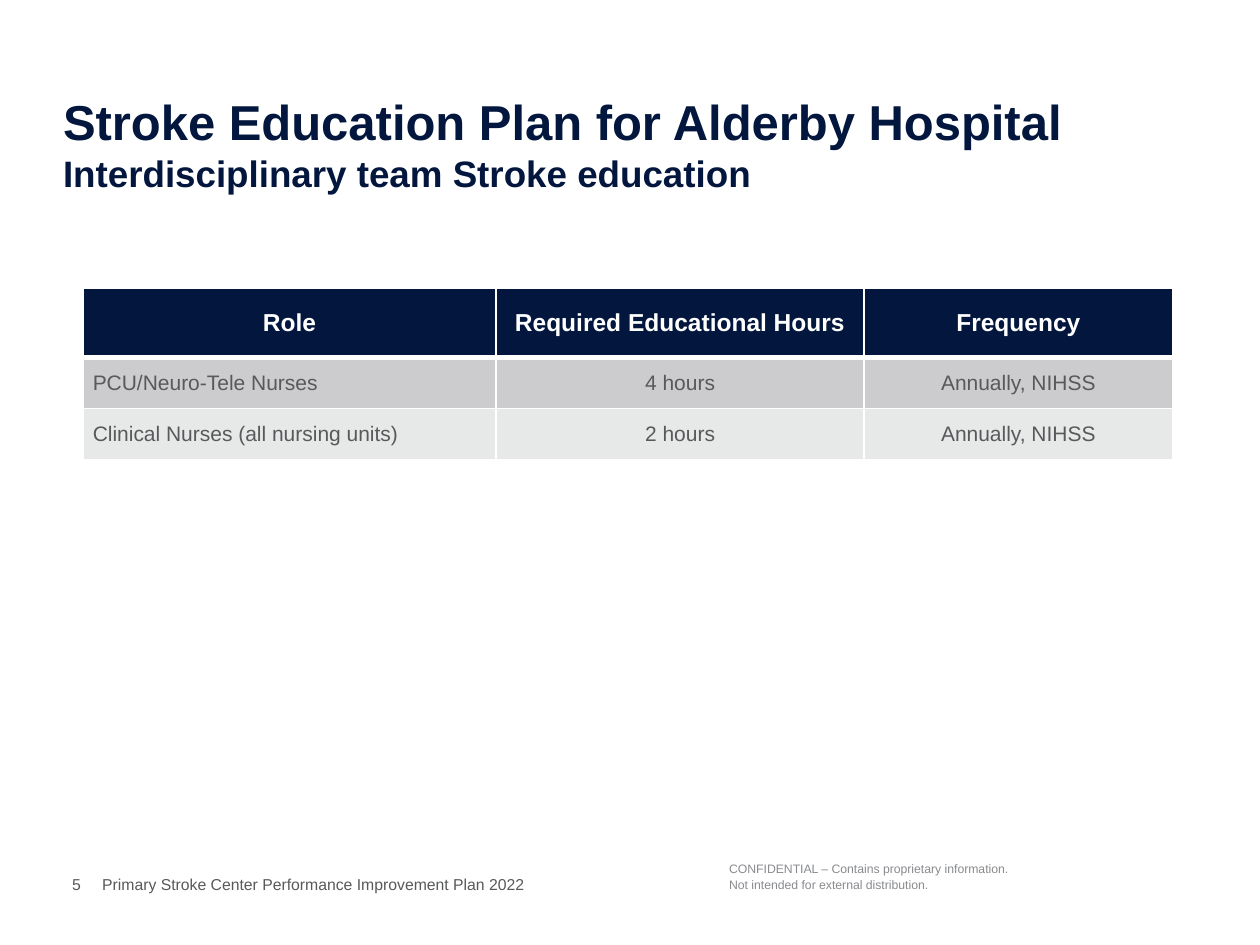
"""Build the stroke education plan slide."""
import dataclasses

import pptx
import pptx.dml.color
import pptx.enum.text
import pptx.oxml
import pptx.oxml.ns
import pptx.util

Cm = pptx.util.Cm
ALIGN = pptx.enum.text.PP_ALIGN
ANCHOR = pptx.enum.text.MSO_ANCHOR


@dataclasses.dataclass(frozen=True)
class Theme:
    """Hold the colours and type sizes of the slide."""
    font: str = "Arial"
    navy: str = "03173E"
    white: str = "FFFFFF"
    text: str = "58595B"
    muted: str = "898B8E"
    bands: tuple = ("CCCCCE", "E7E8E8")
    title: float = 28
    subtitle: float = 21
    header: float = 14
    body: float = 12
    footer: float = 9
    notice: float = 7


THEME = Theme()
COLUMN_WIDTHS = (8.33, 7.42, 6.22)
ROW_HEIGHTS = (1.39, 1.03, 1.03)
EDUCATION = (
    ("Role", "Required Educational Hours", "Frequency"),
    ("PCU/Neuro-Tele Nurses", "4 hours", "Annually, NIHSS"),
    ("Clinical Nurses (all nursing units)", "2 hours", "Annually, NIHSS"),
)


def apply_format(target, values):
    """Set each named attribute on the target."""
    for name, value in values.items():
        setattr(target, name, value)


def add_run(paragraph, words, size, color, bold=False):
    """Add a formatted run to a paragraph."""
    run = paragraph.add_run()
    run.text = words
    apply_format(run.font, {"name": THEME.font, "size": pptx.util.Pt(size), "bold": bold})
    run.font.color.rgb = pptx.dml.color.RGBColor.from_string(color)


def set_frame(frame, anchor, inset=0):
    """Set wrapping, anchor and vertical insets of a text frame."""
    apply_format(frame, {
        "word_wrap": True, "auto_size": pptx.enum.text.MSO_AUTO_SIZE.NONE,
        "vertical_anchor": anchor, "margin_left": 0, "margin_right": 0,
        "margin_top": Cm(inset), "margin_bottom": Cm(inset)})


def add_title(slide, heading, subheading):
    """Fill the title placeholder with a heading and a subheading."""
    title = slide.shapes.title
    apply_format(title, {"left": Cm(1.27), "top": Cm(0.93), "width": Cm(22.86), "height": Cm(3)})
    set_frame(title.text_frame, ANCHOR.BOTTOM)
    paragraph = title.text_frame.paragraphs[0]
    paragraph.alignment = ALIGN.LEFT
    add_run(paragraph, heading, THEME.title, THEME.navy, True)
    paragraph.add_line_break()
    add_run(paragraph, subheading, THEME.subtitle, THEME.navy, True)


def add_note(slide, box, lines, size, color, anchor=ANCHOR.MIDDLE, inset=0.13,
             align=ALIGN.LEFT, spacing=1.0):
    """Add a small text box with one paragraph per line."""
    frame = slide.shapes.add_textbox(*map(Cm, box)).text_frame
    set_frame(frame, anchor, inset)
    for index, line in enumerate(lines):
        paragraph = frame.add_paragraph() if index else frame.paragraphs[0]
        apply_format(paragraph, {"alignment": align, "line_spacing": spacing})
        add_run(paragraph, line, size, color)


def add_borders(cell, top, bottom):
    """Draw white cell borders with the given top and bottom widths in points."""
    properties = cell._tc.get_or_add_tcPr()
    widths = {"lnL": 1, "lnR": 1, "lnT": top, "lnB": bottom}
    for position, (side, width) in enumerate(widths.items()):
        properties.insert(position, pptx.oxml.parse_xml(
            f'<a:{side} {pptx.oxml.ns.nsdecls("a")} w="{pptx.util.Pt(width)}"><a:solidFill>'
            f'<a:srgbClr val="{THEME.white}"/></a:solidFill></a:{side}>'))


def fill_cell(cell, words, row, column):
    """Format one table cell by its row and column."""
    header = row == 0
    apply_format(cell, {
        "vertical_anchor": ANCHOR.MIDDLE, "margin_left": Cm(0.2), "margin_right": Cm(0.2),
        "margin_top": Cm(0.1), "margin_bottom": Cm(0.1)})
    cell.fill.solid()
    fill = THEME.navy if header else THEME.bands[(row - 1) % 2]
    cell.fill.fore_color.rgb = pptx.dml.color.RGBColor.from_string(fill)
    add_borders(cell, top=3 if row == 1 else 1, bottom=3 if header else 1)
    paragraph = cell.text_frame.paragraphs[0]
    paragraph.alignment = ALIGN.CENTER if header or column else ALIGN.LEFT
    add_run(paragraph, words, THEME.header if header else THEME.body,
            THEME.white if header else THEME.text, header)


def add_education_table(slide):
    """Add the table of required hours for each role."""
    table = slide.shapes.add_table(
        len(ROW_HEIGHTS), len(COLUMN_WIDTHS), Cm(1.67), Cm(5.82),
        Cm(sum(COLUMN_WIDTHS)), Cm(sum(ROW_HEIGHTS))).table
    for column, width in zip(table.columns, COLUMN_WIDTHS):
        column.width = Cm(width)
    for row, height in zip(table.rows, ROW_HEIGHTS):
        row.height = Cm(height)
    for row, entries in enumerate(EDUCATION):
        for column, words in enumerate(entries):
            fill_cell(table.cell(row, column), words, row, column)


def main():
    """Build and save the slide."""
    deck = pptx.Presentation()
    apply_format(deck, {"slide_width": Cm(25.4), "slide_height": Cm(19.05)})
    slide = deck.slides.add_slide(deck.slide_layouts.get_by_name("Title Only"))
    add_title(slide, "Stroke Education Plan for Alderby Hospital",
              "Interdisciplinary team Stroke education")
    add_education_table(slide)
    add_note(slide, (14.7, 17.34, 6.53, 0.91),
             ("CONFIDENTIAL – Contains proprietary information.",
              "Not intended for external distribution."),
             THEME.notice, THEME.muted, ANCHOR.TOP, 0, spacing=1.1)
    add_note(slide, (1.02, 17.48, 0.61, 0.69), ("5",), THEME.footer, THEME.text,
             align=ALIGN.RIGHT)
    add_note(slide, (2.06, 17.48, 9.42, 0.69),
             ("Primary Stroke Center Performance Improvement Plan 2022",),
             THEME.footer, THEME.text)
    deck.save("out.pptx")


if __name__ == "__main__":
    main()
